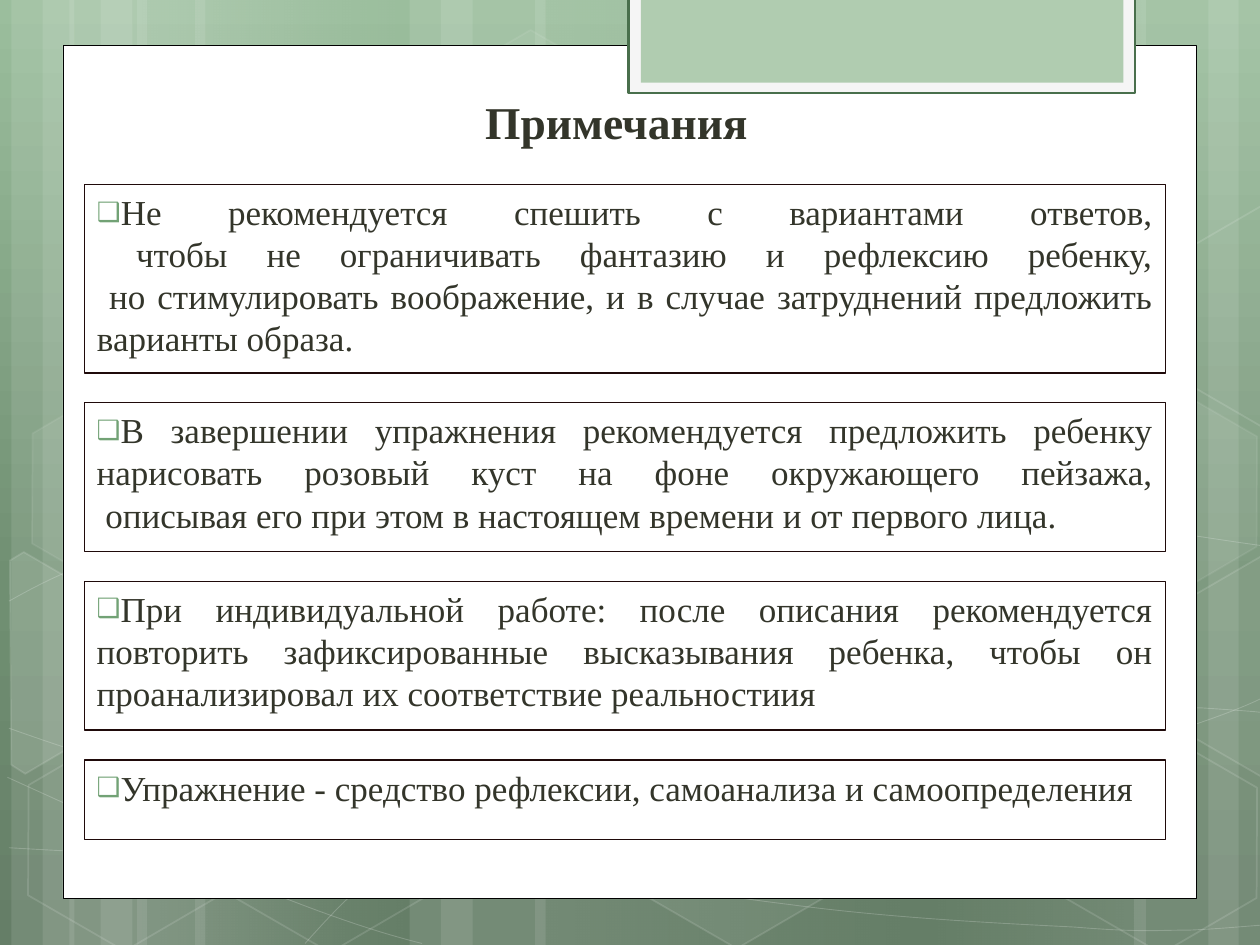
from copy import deepcopy

from lxml import etree
from pptx import Presentation
from pptx.dml.color import RGBColor
from pptx.enum.shapes import MSO_SHAPE
from pptx.enum.text import MSO_ANCHOR, MSO_AUTO_SIZE, PP_ALIGN
from pptx.oxml.ns import qn
from pptx.util import Cm, Pt

RECT, HEXAGON = MSO_SHAPE.RECTANGLE, MSO_SHAPE.HEXAGON
CENTER, JUSTIFY = PP_ALIGN.CENTER, PP_ALIGN.JUSTIFY
TOP, BOTTOM = MSO_ANCHOR.TOP, MSO_ANCHOR.BOTTOM
FIXED = MSO_AUTO_SIZE.NONE
FONT = "Times New Roman"
COLORS = {
    "white": "FFFFFF", "black": "000000", "text": "33352A",
    "border": "1F0A0A", "bullet": "72A275",
    "frame": "F5F5F5", "edge": "496F4C", "tab": "B0CCB0",
    "light": "9BBE9D", "mid": "708F72", "dark": "657E67",
}


def paint(shape, fill=None, line=None, width=1, clear=(100, 100)):
    """Set fill and line; clear holds the opacity of each in percent."""
    shape.shadow.inherit = False
    if fill:
        shape.fill.solid()
        shape.fill.fore_color.rgb = RGBColor.from_string(COLORS[fill])
    else:
        shape.fill.background()
    if line:
        shape.line.color.rgb = RGBColor.from_string(COLORS[line])
        shape.line.width = Pt(width)
    else:
        shape.line.fill.background()
    for place, part in zip(clear, ("p:spPr/a:solidFill", "p:spPr/a:ln/a:solidFill")):
        for color in shape.element.xpath(part + "/a:srgbClr"):
            if place < 100:
                etree.SubElement(color, qn("a:alpha"), val=str(place * 1000))


def write(shape, text, size, align, anchor, bold=False, bullet=False):
    frame = shape.text_frame
    frame.word_wrap = True
    frame.auto_size = FIXED
    frame.vertical_anchor = anchor
    para = frame.paragraphs[0]
    para.text = text
    if bullet:
        props = para._p.get_or_add_pPr()
        props.set("marL", "0")
        props.set("indent", "0")
        tint = etree.SubElement(props, qn("a:buClr"))
        etree.SubElement(tint, qn("a:srgbClr"), val=COLORS["bullet"])
        etree.SubElement(props, qn("a:buSzPct"), val="76000")
        etree.SubElement(props, qn("a:buFont"), typeface="Arial")
        etree.SubElement(props, qn("a:buChar"), char="❑")
    para.alignment = align
    para.line_spacing = 1.0
    para.space_before = Pt(0)
    for run in para.runs:
        run.font.name = FONT
        run.font.size = Pt(size)
        run.font.bold = bold
        run.font.color.rgb = RGBColor.from_string(COLORS["text"])


deck = Presentation()
deck.slide_width, deck.slide_height = Cm(25.4), Cm(19.05)
slide = deck.slides.add_slide(deck.slide_layouts[1])
shapes = slide.shapes
title, body = slide.placeholders

# Background gradient
back = slide.background.fill
back.gradient()
back.gradient_angle = 270
stops = slide.element.xpath(".//a:gsLst")[0]
stops.append(deepcopy(stops[-1]))
for stop, place, name in zip(back.gradient_stops, (0, 0.62, 1), ("light", "mid", "dark")):
    stop.position = place
    stop.color.rgb = RGBColor.from_string(COLORS[name])

# Vertical bands: left, width, rotation; the wide ones fade out
bands = [
    (2.77, 4.45, 0), (0.23, 1.27, 0), (0.86, 2.11, 0),
    (3.94, 4.45, 0), (1.4, 1.27, 0), (2.03, 2.11, 0),
    (18.64, 4.45, 180), (24.36, 1.27, 180), (22.86, 2.11, 180),
    (10.8, 7.82, 0), (8.26, 1.27, 0), (8.89, 2.11, 0),
]
for left, width, turn in bands:
    band = shapes.add_shape(RECT, Cm(left), 0, Cm(width), deck.slide_height)
    band.rotation = turn
    paint(band, "white", clear=(10, 100))
    if width > 4:
        band.fill.gradient()
        band.fill.gradient_angle = 0
        for stop, place in zip(band.fill.gradient_stops, (0, 1)):
            stop.position = place
            stop.color.rgb = RGBColor.from_string(COLORS["white"])
        for color, alpha in zip(band.element.xpath(".//a:gs/a:srgbClr"), ("10000", "0")):
            etree.SubElement(color, qn("a:alpha"), val=alpha)

# Thin curves: a start point, then three Bezier points per segment
curves = [
    [(0.18, 17.09), (1.55, 17.17), (2.92, 17.25), (4.83, 17.22), (6.73, 17.2),
     (9.09, 17.15), (11.63, 16.89), (14.17, 16.64), (17.78, 16.15), (20.12, 15.67),
     (22.43, 15.19), (24.82, 14.43), (25.58, 14)],
    [(0.18, 12.12), (0.91, 11.71), (1.65, 11.33), (3.07, 10.95), (4.52, 10.57),
     (6.58, 10.01), (8.81, 9.83), (11.07, 9.65), (13.84, 9.63), (16.61, 9.83),
     (19.41, 10.03), (24.05, 10.82), (25.58, 11.02)],
    [(0.15, 15.67), (3.23, 17.07), (6.27, 18.47), (8.51, 19.02)],
    [(0.18, 14.68), (0.97, 14.96), (1.78, 15.24), (3.25, 15.65), (4.72, 16.03),
     (6.93, 16.66), (9.07, 17.09), (11.18, 17.53), (13.84, 17.98), (15.95, 18.24),
     (18.06, 18.52), (20.32, 18.62), (21.67, 18.69), (23.01, 18.8), (23.34, 18.75),
     (24, 18.75), (24.66, 18.72), (25.12, 18.67), (25.58, 18.64)],
    [(6.15, 19.02), (6.6, 18.52), (7.06, 18.01), (7.67, 17.55), (8.28, 17.07),
     (9.14, 16.59), (9.86, 16.23), (10.57, 15.88), (11, 15.72), (11.91, 15.47),
     (12.85, 15.21), (14.55, 14.86), (15.44, 14.68), (16.36, 14.5), (16.48, 14.5),
     (17.27, 14.45), (18.06, 14.38), (19.3, 14.27), (20.17, 14.27), (21.06, 14.25),
     (22.5, 14.27), (22.5, 14.27), (22.5, 14.27), (24.21, 14.27), (24.21, 14.27),
     (24.66, 14.3), (25.1, 14.33), (25.32, 14.35), (25.55, 14.38), (25.48, 14.35),
     (25.55, 14.38)],
]
for knots in curves:
    dots = [(Cm(x), Cm(y)) for x, y in knots]
    pen = shapes.build_freeform(*dots[0])
    pen.add_line_segments(dots[1:], close=False)
    curve = pen.convert_to_shape()
    lines = curve.element.xpath(".//a:lnTo")
    for i in range(0, len(lines), 3):
        bend = etree.SubElement(lines[i].getparent(), qn("a:cubicBezTo"))
        for line in lines[i:i + 3]:
            bend.append(line[0])
            line.getparent().remove(line)
    paint(curve, None, "white", 0.5, (100, 20))

# Hexagons: left, top, fill and line opacity
cells = [
    (8.48, 0.91, 4, 8), (12.62, 14.96, 6, 12), (0.28, 15.01, 0, 12),
    (0.36, 7.92, 7, 8), (4.42, 15.04, 0, 12), (19.13, 11.51, 10, 12),
    (21.18, 15.06, 0, 12), (21.18, 7.98, 7, 8),
]
for left, top, fill, line in cells:
    cell = shapes.add_shape(HEXAGON, Cm(left), Cm(top), Cm(4.45), Cm(3.86))
    cell.adjustments[0] = 0.285
    cell.rotation = 30
    paint(cell, "white" if fill else None, "white", 1, (fill, line))

# Hexagons cut off by the slide edges
cuts = [
    (10, [(0.2, 11.3), (0.48, 11.13), (2.44, 12.27), (2.41, 14.48), (0.51, 15.6), (0.23, 15.42)]),
    (4, [(23.52, 12.32), (25.45, 11.2), (25.63, 11.33), (25.63, 15.57), (25.45, 15.67), (23.52, 14.55)]),
    (0, [(23.52, 5.26), (25.45, 4.14), (25.65, 4.27), (25.63, 8.51), (25.45, 8.61), (23.52, 7.49)]),
]
for fill, knots in cuts:
    dots = [(Cm(x), Cm(y)) for x, y in knots]
    pen = shapes.build_freeform(*dots[0])
    pen.add_line_segments(dots[1:], close=True)
    paint(pen.convert_to_shape(), "white" if fill else None, "white", 1, (fill, 12))

# White page and the tab at its top
panels = [
    (1.27, 0.91, 22.86, 17.2, "white", "black", 0.5),
    (12.67, -0.06, 10.22, 1.94, "frame", "edge", 1.25),
    (12.92, -0.06, 9.73, 1.73, "tab", None, 0),
]
for left, top, width, height, fill, line, weight in panels:
    panel = shapes.add_shape(RECT, Cm(left), Cm(top), Cm(width), Cm(height))
    paint(panel, fill, line, weight)

# Title and body come in front of the decoration
for holder in (title, body):
    holder.element.getparent().append(holder.element)
title.left, title.top, title.width, title.height = Cm(2.79), Cm(0.2), Cm(19.51), Cm(2.92)
write(title, "Примечания ", 26, CENTER, BOTTOM, bold=True)

notes = [
    (3.8, "Не рекомендуется спешить с вариантами ответов,\n чтобы не ограничивать фантазию "
          "и рефлексию ребенку,\n но стимулировать воображение, и в случае затруднений "
          "предложить варианты образа."),
    (3, "В завершении упражнения рекомендуется предложить ребенку нарисовать розовый куст "
        "на фоне окружающего пейзажа,\n описывая его при этом в настоящем времени и от первого лица. "),
    (3, "При индивидуальной работе: после описания рекомендуется повторить зафиксированные "
        "высказывания ребенка, чтобы он проанализировал их соответствие реальностиия"),
    (1.6, "Упражнение - средство рефлексии, самоанализа и самоопределения"),
]
top = 3.72
for i, (height, text) in enumerate(notes):
    box = shapes.add_textbox(0, 0, 0, 0) if i else body
    box.left, box.top, box.width, box.height = Cm(1.7), Cm(top), Cm(21.79), Cm(height)
    paint(box, None, "border", 0.75)
    write(box, text, 20, JUSTIFY, TOP, bullet=True)
    top += height + 0.6

deck.save("out.pptx")
